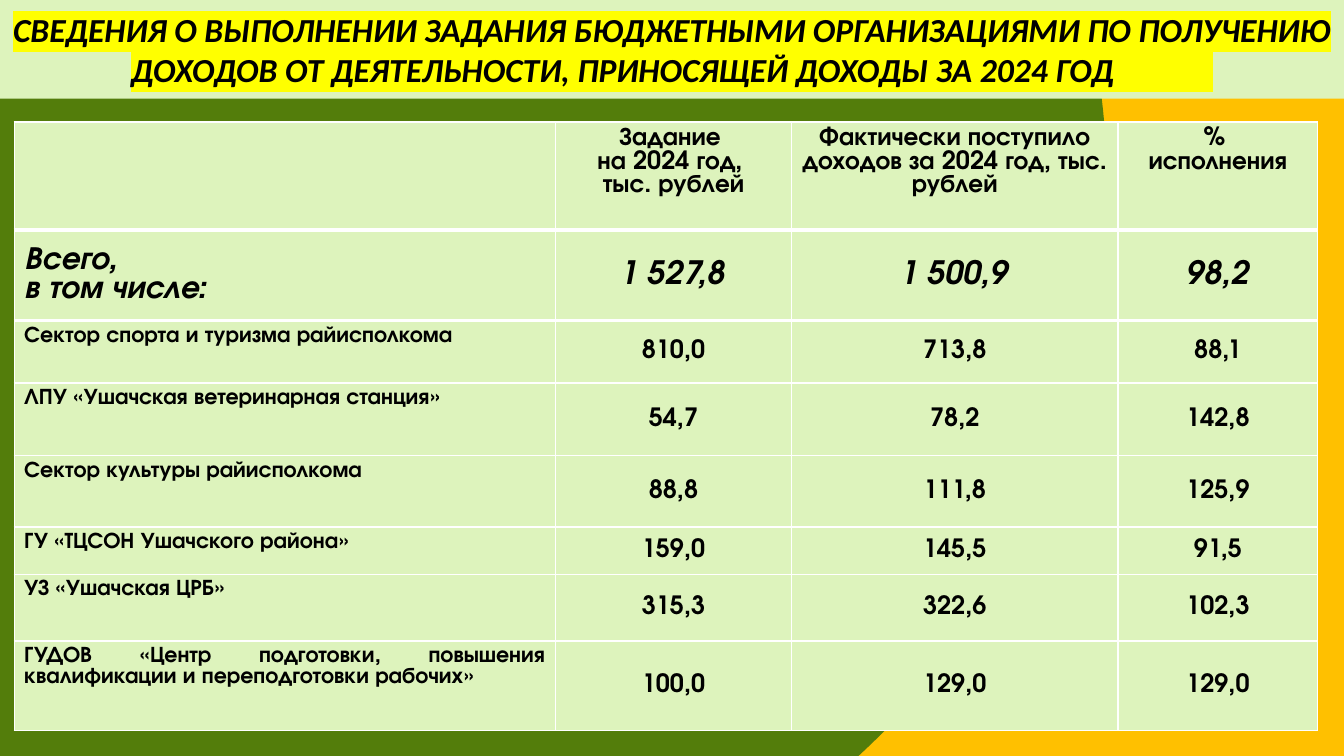
import pptx
import pptx.dml.color
import pptx.enum.text
import pptx.oxml
import pptx.oxml.ns
import pptx.util
from dataclasses import dataclass

Inches = pptx.util.Inches
ALIGN = pptx.enum.text.PP_ALIGN
ANCHOR = pptx.enum.text.MSO_ANCHOR

TITLE = ("СВЕДЕНИЯ О ВЫПОЛНЕНИИ ЗАДАНИЯ БЮДЖЕТНЫМИ ОРГАНИЗАЦИЯМИ ПО ПОЛУЧЕНИЮ "
         "ДОХОДОВ ОТ ДЕЯТЕЛЬНОСТИ, ПРИНОСЯЩЕЙ ДОХОДЫ ЗА 2024 ГОД             ")
HEADER = ["", "Задание \nна 2024 год, \nтыс. рублей",
          "Фактически поступило доходов за 2024 год, тыс. рублей", "% \nисполнения"]
TOTAL = ["Всего,\nв том числе:", "1 527,8", "1 500,9", "98,2"]
ORGANIZATIONS = [
    ["Сектор спорта и туризма райисполкома", "810,0", "713,8", "88,1"],
    ["ЛПУ «Ушачская ветеринарная станция»", "54,7", "78,2", "142,8"],
    ["Сектор культуры райисполкома", "88,8", "111,8", "125,9"],
    ["ГУ «ТЦСОН Ушачского района»", "159,0", "145,5", "91,5"],
    ["УЗ «Ушачская ЦРБ»", "315,3", "322,6", "102,3"],
    ["ГУДОВ «Центр подготовки, повышения квалификации и переподготовки рабочих»",
     "100,0", "129,0", "129,0"],
]
COLUMN_WIDTHS = [5.37, 2.34, 3.24, 1.98]
ROW_HEIGHTS = [1.07, 0.9, 0.62, 0.72, 0.71, 0.47, 0.66, 0.89]


@dataclass
class Theme:
    title_font: str = "Calibri"
    table_font: str = "TeX Gyre Adventor"
    text: str = "000000"
    panel: str = "DDF3BC"
    highlight: str = "FFFF00"
    green: str = "537D0B"
    amber: str = "FFC000"
    rule: str = "FFFFFF"
    rule_width: int = 3
    title_size: int = 24
    total_size: int = 23
    value_size: int = 18
    name_size: int = 16


THEME = Theme()


def rgb(value):
    return pptx.dml.color.RGBColor.from_string(value)


def fill_panel(target):
    target.fill.solid()
    target.fill.fore_color.rgb = rgb(THEME.panel)


def write_text(tf, text, *, size, font=THEME.table_font, italic=False,
               align=ALIGN.CENTER, highlight=None):
    """Write one paragraph per line of text."""
    for i, line in enumerate(text.split("\n")):
        p = tf.paragraphs[0] if i == 0 else tf.add_paragraph()
        p.alignment = align
        r = p.add_run()
        r.text = line
        r.font.name = font
        r.font.size = pptx.util.Pt(size)
        r.font.bold = True
        r.font.italic = italic
        r.font.color.rgb = rgb(THEME.text)
        if highlight:
            mark = pptx.oxml.parse_xml(
                f'<a:highlight {pptx.oxml.ns.nsdecls("a")}>'
                f'<a:srgbClr val="{highlight}"/></a:highlight>')
            r.font._element.find(pptx.oxml.ns.qn("a:solidFill")).addnext(mark)


def paint_background(slide):
    """Split the background along a circle with a hard-edged radial gradient."""
    slide.background.fill.gradient()
    grad = slide._element.find(".//" + pptx.oxml.ns.qn("a:gradFill"))
    stops = "".join(f'<a:gs pos="100000"><a:srgbClr val="{c}"/></a:gs>'
                    for c in (THEME.green, THEME.amber))
    grad.getparent().replace(grad, pptx.oxml.parse_xml(
        f'<a:gradFill {pptx.oxml.ns.nsdecls("a")} rotWithShape="1">'
        f'<a:gsLst>{stops}</a:gsLst><a:path path="circle">'
        '<a:fillToRect l="50000" t="50000" r="100000" b="100000"/>'
        '</a:path></a:gradFill>'))


def add_title(slide):
    sp = slide.shapes.title
    sp.left, sp.top, sp.width, sp.height = map(Inches, (0, 0, 13.33, 0.98))
    fill_panel(sp)
    tf = sp.text_frame
    tf.word_wrap = True
    tf.vertical_anchor = ANCHOR.MIDDLE
    write_text(tf, TITLE, size=THEME.title_size, font=THEME.title_font,
               italic=True, highlight=THEME.highlight)


def add_rule(cell, side):
    """Draw the thick rule on the cell's side, "T" or "B"."""
    cell._tc.get_or_add_tcPr().insert(0, pptx.oxml.parse_xml(
        f'<a:ln{side} {pptx.oxml.ns.nsdecls("a")} w="{pptx.util.Pt(THEME.rule_width)}">'
        f'<a:solidFill><a:srgbClr val="{THEME.rule}"/></a:solidFill></a:ln{side}>'))


def add_income_table(slide):
    rows = [HEADER, TOTAL, *ORGANIZATIONS]
    table = slide.shapes.add_table(
        len(rows), len(HEADER), Inches(0.14), Inches(1.21),
        Inches(sum(COLUMN_WIDTHS)), Inches(sum(ROW_HEIGHTS))).table
    table.horz_banding = False
    for column, width in zip(table.columns, COLUMN_WIDTHS):
        column.width = Inches(width)
    for row, height in zip(table.rows, ROW_HEIGHTS):
        row.height = Inches(height)

    for i, row in enumerate(rows):
        is_header, is_total = i == 0, i == 1
        for j, text in enumerate(row):
            cell = table.cell(i, j)
            fill_panel(cell)
            if is_header or is_total:
                add_rule(cell, "B" if is_header else "T")
            is_name = j == 0 and not is_header
            size, align = THEME.value_size, ALIGN.CENTER
            if is_name:
                size = THEME.name_size
                align = ALIGN.LEFT if is_total else ALIGN.JUSTIFY
            if is_total:
                size = THEME.total_size
            if is_total or not (is_header or is_name):
                cell.vertical_anchor = ANCHOR.MIDDLE
            if text:
                write_text(cell.text_frame, text, size=size, align=align,
                           italic=is_total)


def main():
    prs = pptx.Presentation()
    prs.slide_width, prs.slide_height = Inches(13.33), Inches(7.5)
    slide = prs.slides.add_slide(prs.slide_layouts[5])
    paint_background(slide)
    add_title(slide)
    add_income_table(slide)
    prs.save("out.pptx")


if __name__ == "__main__":
    main()
